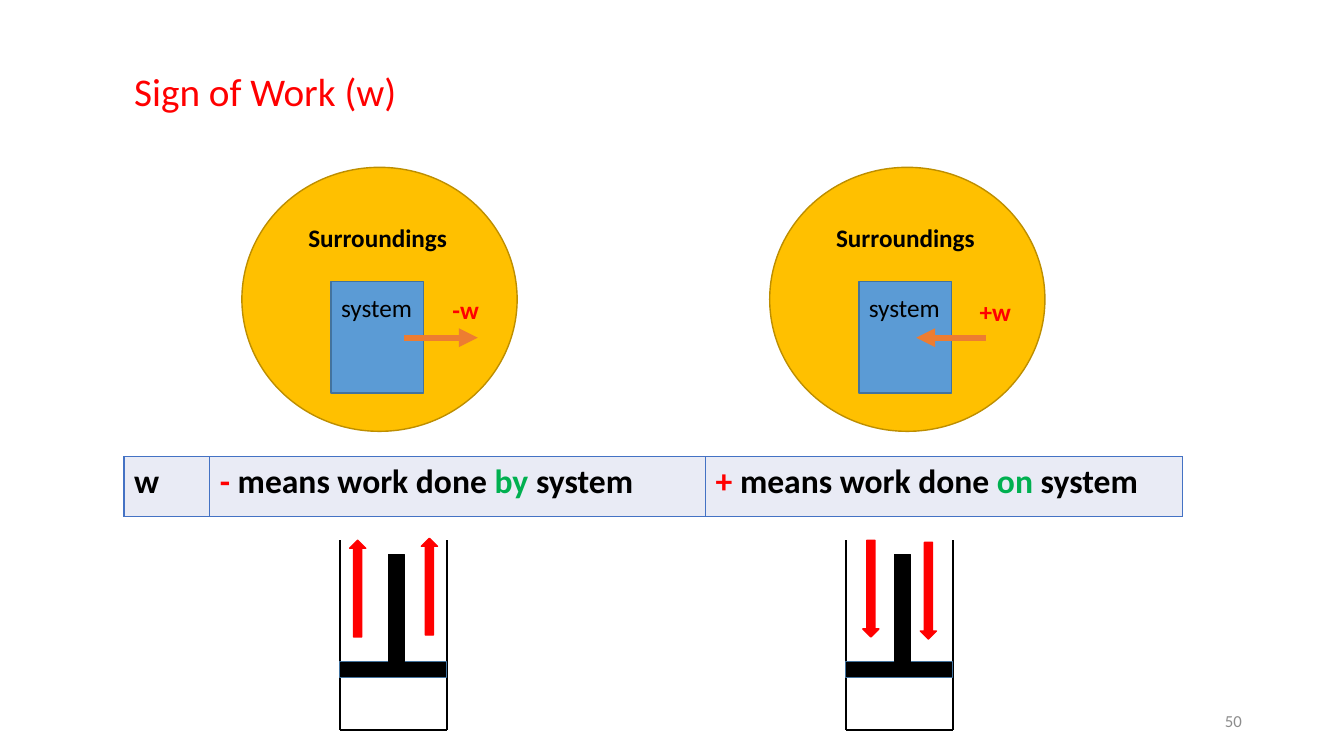
from lxml import etree
from pptx import Presentation
from pptx.dml.color import RGBColor
from pptx.enum.shapes import MSO_CONNECTOR, MSO_SHAPE
from pptx.enum.text import MSO_ANCHOR, PP_ALIGN
from pptx.oxml.ns import qn
from pptx.util import Pt

STRAIGHT = MSO_CONNECTOR.STRAIGHT
OVAL, RECTANGLE, UP_ARROW = MSO_SHAPE.OVAL, MSO_SHAPE.RECTANGLE, MSO_SHAPE.UP_ARROW
TOP, MIDDLE = MSO_ANCHOR.TOP, MSO_ANCHOR.MIDDLE
LEFT, RIGHT = PP_ALIGN.LEFT, PP_ALIGN.RIGHT
TITLE_ONLY = 5

RED, GREEN, BLACK, GREY = "FF0000", "00B050", "000000", "8C8C8C"
GOLD, GOLD_EDGE = "FFC000", "BD8E00"
BLUE, BLUE_EDGE = "5B9BD5", "43739E"
ORANGE, CELL_FILL, CELL_EDGE = "ED7D31", "E9EBF5", "4472C4"


def colour(value):
    return RGBColor.from_string(value)


class SlideBuilder:
    font = "Calibri"

    def __init__(self, slide):
        self.slide = slide

    def add_runs(self, frame, runs, size, bold=False, align=LEFT):
        para = frame.paragraphs[0]
        para.alignment = align
        for text, hue in runs:
            span = para.add_run()
            span.text = text
            span.font.name = self.font
            span.font.size = Pt(size)
            span.font.bold = bold
            span.font.color.rgb = colour(hue)

    def title(self, text, left, top, width, height):
        box = self.slide.shapes.title
        box.left, box.top, box.width, box.height = Pt(left), Pt(top), Pt(width), Pt(height)
        box.text_frame.word_wrap = False
        box.text_frame.vertical_anchor = TOP
        self.add_runs(box.text_frame, [(text, RED)], 28)

    def text(self, text, left, top, width, hue=BLACK, size=18, bold=False,
             align=LEFT, anchor=TOP, wrap=False):
        box = self.slide.shapes.add_textbox(Pt(left), Pt(top), Pt(width), Pt(29))
        box.text_frame.word_wrap = wrap
        box.text_frame.vertical_anchor = anchor
        self.add_runs(box.text_frame, [(text, hue)], size, bold, align)

    def shape(self, kind, left, top, width, height, fill, edge, rotation=0):
        shape = self.slide.shapes.add_shape(kind, Pt(left), Pt(top), Pt(width), Pt(height))
        shape.shadow.inherit = False
        shape.fill.solid()
        shape.fill.fore_color.rgb = colour(fill)
        shape.line.color.rgb = colour(edge)
        shape.line.width = Pt(1)
        shape.rotation = rotation

    def line(self, x1, y1, x2, y2, hue=BLACK, width=1.5, arrow=False):
        line = self.slide.shapes.add_connector(STRAIGHT, Pt(x1), Pt(y1), Pt(x2), Pt(y2))
        line.line.color.rgb = colour(hue)
        line.line.width = Pt(width)
        properties = line._element.spPr
        if arrow:
            etree.SubElement(properties.get_or_add_ln(), qn("a:tailEnd"), type="triangle")
        etree.SubElement(properties, qn("a:effectLst"))

    def table(self, left, top, widths, height, cells, size):
        frame = self.slide.shapes.add_table(
            1, len(widths), Pt(left), Pt(top), Pt(sum(widths)), Pt(height))
        table = frame.table
        table.rows[0].height = Pt(height)
        for index, (width, runs) in enumerate(zip(widths, cells)):
            table.columns[index].width = Pt(width)
            cell = table.cell(0, index)
            self.border(cell)
            cell.fill.solid()
            cell.fill.fore_color.rgb = colour(CELL_FILL)
            self.add_runs(cell.text_frame, runs, size, bold=True)

    def border(self, cell):
        properties = cell._tc.get_or_add_tcPr()
        for side in ("lnL", "lnR", "lnT", "lnB"):
            edge = etree.SubElement(properties, qn(f"a:{side}"), w=str(Pt(1)))
            fill = etree.SubElement(edge, qn("a:solidFill"))
            etree.SubElement(fill, qn("a:srgbClr"), val=CELL_EDGE)

    def surroundings(self, left):
        self.shape(OVAL, left, 119.5, 196.6, 188.6, GOLD, GOLD_EDGE)
        self.text("Surroundings", left + 40.3, 155.5, 114.5, bold=True)
        self.shape(RECTANGLE, left + 63.7, 200.9, 66.2, 80, BLUE, BLUE_EDGE)
        self.text("system", left + 63.7, 205.2, 65.5)

    def piston(self, left, arrows, rotation):
        top, bottom, width = 385.9, 521.3, 76.5
        right = left + width
        self.line(left, top, left, bottom)
        self.line(right, bottom, left, bottom)
        self.line(right, top, right, bottom)
        self.shape(RECTANGLE, left, 472.5, width, 11.5, BLACK, BLUE_EDGE)
        self.shape(RECTANGLE, left + 34.7, 396, 11.5, width, BLACK, BLACK)
        for offset, arrow_top in arrows:
            self.shape(UP_ARROW, left + offset, arrow_top, 11.5, 69.1, RED, RED, rotation)


def main():
    deck = Presentation()
    deck.slide_width, deck.slide_height = Pt(960), Pt(540)
    page = SlideBuilder(deck.slides.add_slide(deck.slide_layouts[TITLE_ONLY]))

    page.title("Sign of Work (w)", 88.6, 44.6, 203.8, 85)
    page.table(88.6, 326.2, [61.2, 354.2, 340.6], 42.5, [
        [("w", BLACK)],
        [("-", RED), (" means work done ", BLACK), ("by", GREEN), (" system", BLACK)],
        [("+", RED), (" means work done ", BLACK), ("on", GREEN), (" system", BLACK)],
    ], 24)

    for left in (172.8, 549.8):
        page.surroundings(left)
    page.line(288.7, 241.2, 341.3, 241.2, ORANGE, 4.5, arrow=True)
    page.line(704.2, 241.2, 654.5, 241.2, ORANGE, 4.5, arrow=True)
    page.text("-w", 316.1, 206.6, 33.8, RED, bold=True)
    page.text("+w", 692.6, 208.1, 37.4, RED, bold=True)

    page.piston(242.6, [(7.2, 385.9), (58.4, 384.5)], 0)
    page.piston(604.1, [(53.3, 387.4), (12.2, 385.9)], 180)
    page.text("50", 678.2, 500.4, 216, GREY, 12, align=RIGHT, anchor=MIDDLE, wrap=True)

    deck.save("out.pptx")


if __name__ == "__main__":
    main()
